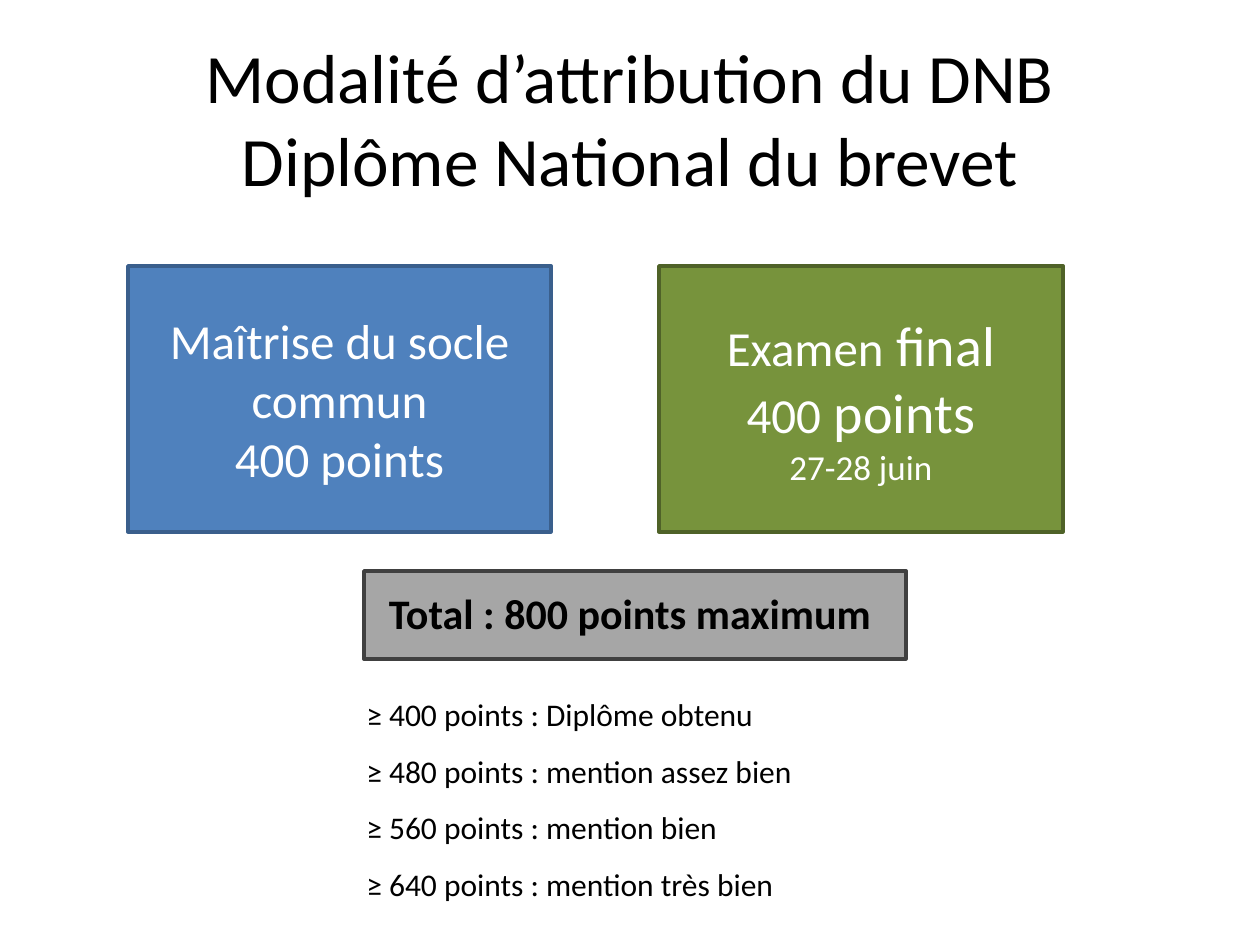
from pptx import Presentation
from pptx import util as u
from pptx.dml.color import RGBColor
from pptx.enum import shapes, text

PX = 914400 / 126  # EMU per pixel
MID = text.PP_ALIGN.CENTER


def px(*vals):
    return [u.Emu(round(v * PX)) for v in vals]


def write(para, words, size, color, **form):
    """Add a run to a paragraph with the given font values."""
    run = para.add_run()
    run.text = words
    run.font.color.rgb = RGBColor.from_string(color)
    for key, val in dict(name="Calibri", size=u.Pt(size), **form).items():
        setattr(run.font, key, val)


prs = Presentation()
prs.slide_width, prs.slide_height = px(1260, 945)
slide = prs.slides.add_slide(prs.slide_layouts[5])

# Title
title = slide.shapes.title
title.left, title.top, title.width, title.height = px(63, 38, 1134, 158)
frame = title.text_frame
frame.auto_size = text.MSO_AUTO_SIZE.NONE
frame.vertical_anchor = text.MSO_ANCHOR.MIDDLE
para = frame.paragraphs[0]
para.alignment = MID
for n, line in enumerate(["Modalité d’attribution du DNB", "Diplôme National du brevet"]):
    if n:
        para.add_line_break()
    write(para, line, 39.6, "000000")

# Boxes: place, fill, line, paragraphs of (words, size) runs
boxes = [
    ((364, 571, 542, 88), "A6A6A6", "404040", []),
    ((128, 266, 423, 266), "4F81BD", "3A5F8C",
     [[("Maîtrise du socle commun", 28)], [("400 points", 28)]]),
    ((659, 266, 404, 266), "77933C", "4F6228",
     [[("Examen", 28), (" final", 32)],
      [("400", 28), (" points", 32)],
      [("27-28 juin", 20)]]),
]
for place, fill, edge, paras in boxes:
    box = slide.shapes.add_shape(shapes.MSO_SHAPE.RECTANGLE, *px(*place))
    box.shadow.inherit = False
    box.fill.solid()
    box.fill.fore_color.rgb = RGBColor.from_string(fill)
    box.line.color.rgb = RGBColor.from_string(edge)
    box.line.width = u.Pt(2)
    frame = box.text_frame
    frame.word_wrap = True
    frame.vertical_anchor = text.MSO_ANCHOR.MIDDLE
    for n, runs in enumerate(paras):
        para = frame.add_paragraph() if n else frame.paragraphs[0]
        para.alignment = MID
        for words, size in runs:
            write(para, words, size, "FFFFFF")

# Total and grades
note = slide.shapes.add_textbox(*px(354, 581, 552, 331))
frame = note.text_frame
frame.word_wrap = True
frame.auto_size = text.MSO_AUTO_SIZE.SHAPE_TO_FIT_TEXT
total = frame.paragraphs[0]
total.alignment = MID
total.space_after = u.Pt(22)
write(total, "Total : 800 points maximum", 24, "000000", bold=True)
grades = {400: "Diplôme obtenu", 480: "mention assez bien",
          560: "mention bien", 640: "mention très bien"}
for score, grade in grades.items():
    para = frame.add_paragraph()
    para.line_spacing = 1.5
    write(para, f"≥ {score} points : {grade}", 18, "000000")

prs.save("out.pptx")
